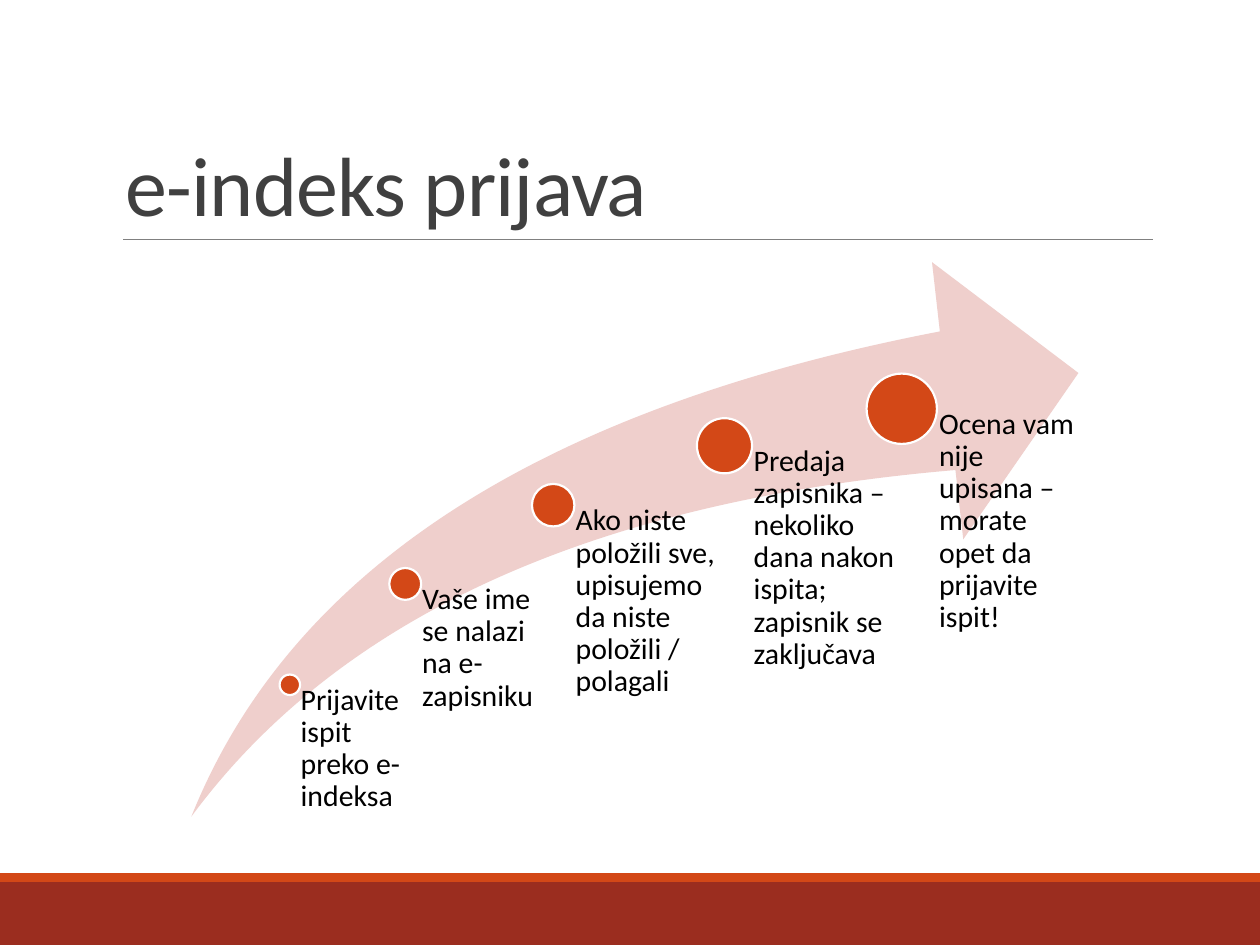
from lxml import etree
from pptx import Presentation
from pptx.dml.color import RGBColor
from pptx.enum import shapes as kinds, text as layout
from pptx.oxml import ns
from pptx.util import Pt


def paint(color_format, color):
    """Apply a hex colour to a solid fill or a font colour."""
    color_format.rgb = RGBColor.from_string(color)


def add_filled(kind, left, top, width, height, color):
    """Add a preset shape with a flat fill and no outline."""
    shape = page.shapes.add_shape(kind, Pt(left), Pt(top), Pt(width), Pt(height))
    shape.shadow.inherit = False
    shape.fill.solid()
    paint(shape.fill.fore_color, color)
    shape.line.fill.background()
    return shape


deck = Presentation()
deck.slide_width, deck.slide_height = Pt(720), Pt(540)
page = deck.slides.add_slide(deck.slide_layouts[6])
preset = kinds.MSO_SHAPE

# Footer bands and title rule
add_filled(preset.RECTANGLE, 0, 504, 720, 36, "9B2D1F")
add_filled(preset.RECTANGLE, 0, 499, 720, 5, "D34817")
rule = page.shapes.add_connector(
    kinds.MSO_CONNECTOR.STRAIGHT, Pt(70.5), Pt(136.8), Pt(658.8), Pt(136.8))
rule.line.width = Pt(0.5)
paint(rule.line.color, "808080")
etree.SubElement(rule._element.spPr, ns.qn("a:effectLst"))

# Title
title = page.shapes.add_textbox(Pt(64.8), Pt(22.3), Pt(594), Pt(114.5))
frame = title.text_frame
frame.word_wrap = True
frame.vertical_anchor = layout.MSO_ANCHOR.BOTTOM
para = frame.paragraphs[0]
para.line_spacing = 0.85
span = para.add_run()
span.text = "e-indeks prijava"
span.font.name, span.font.size = "Calibri", Pt(48)
paint(span.font.color, "404040")
span._r.get_or_add_rPr().set("spc", "-50")

# Rising arrow
arrow = add_filled(preset.SWOOSH_ARROW, 109.4, 149.8, 506.9, 316.8, "EFCFCC")
arrow.adjustments[0] = arrow.adjustments[1] = 0.25

# Steps: dot centre x and y, dot diameter, text width, wording
steps = [
    (165.6, 391.3, 11.7, 66.2, "Prijavite ispit preko e-indeksa"),
    (231.6, 333.7, 18.2, 84.2, "Vaše ime se nalazi na e-zapisniku"),
    (316.1, 288.7, 24.3, 97.9,
     "Ako niste položili sve, upisujemo da niste položili / polagali"),
    (414, 254.7, 31.5, 101.5,
     "Predaja zapisnika – nekoliko dana nakon ispita; zapisnik se zaključava"),
    (515.3, 233.6, 40.2, 101.5,
     "Ocena vam nije upisana – morate opet da prijavite ispit!"),
]
steps_bottom = 466.6
for x, y, size, width, wording in steps:
    dot = add_filled(preset.OVAL, x - size / 2, y - size / 2, size, size, "D34817")
    dot.line.width = Pt(1.25)
    paint(dot.line.color, "FFFFFF")

    box = page.shapes.add_textbox(Pt(x), Pt(y), Pt(width), Pt(steps_bottom - y))
    frame = box.text_frame
    frame.word_wrap = True
    frame.margin_left = Pt(size * 0.53)
    frame.margin_top = frame.margin_right = frame.margin_bottom = 0
    para = frame.paragraphs[0]
    para.text = wording
    para.line_spacing = 0.9
    para.font.name, para.font.size = "Calibri", Pt(17)
    paint(para.font.color, "000000")

deck.save("out.pptx")
